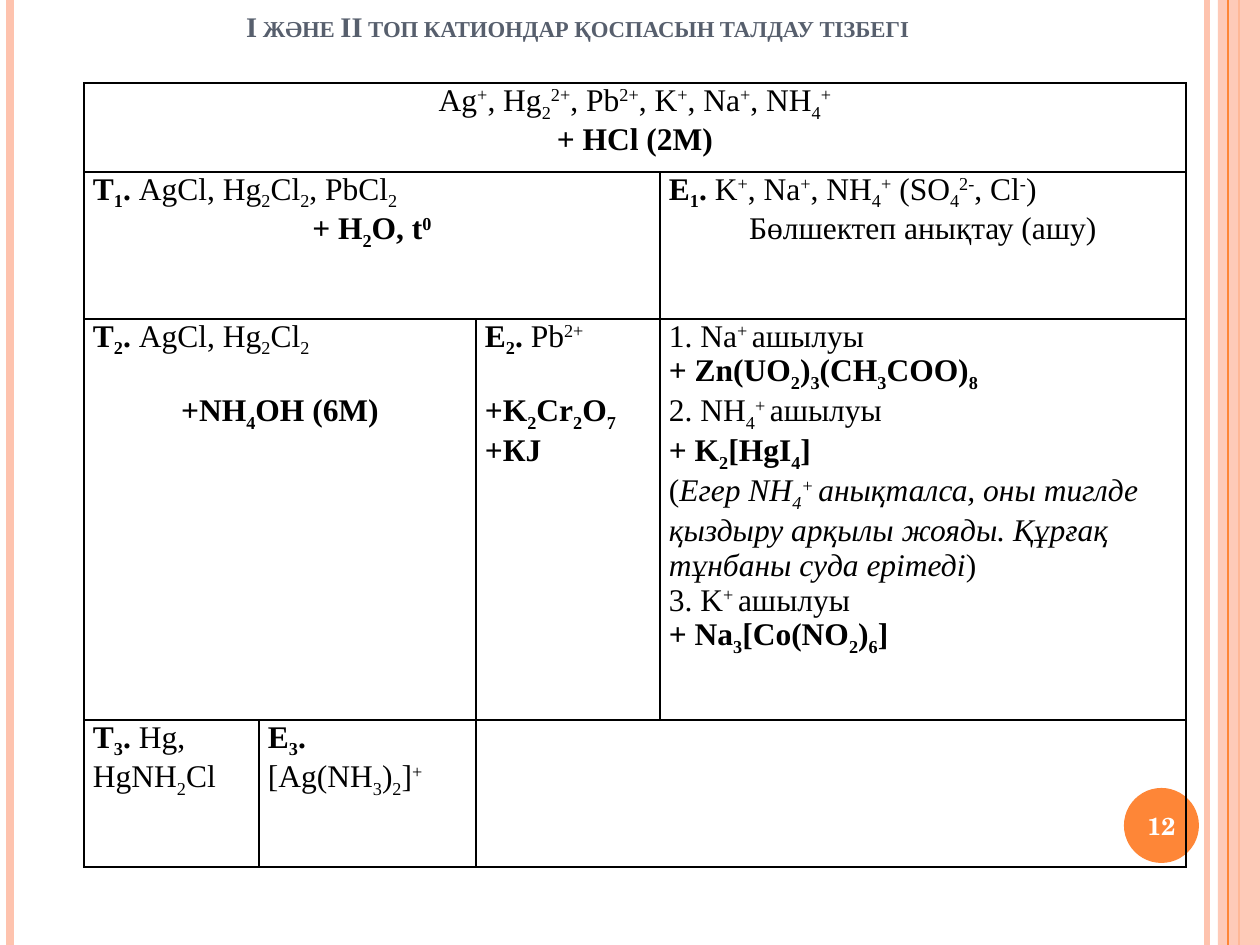
from lxml.etree import SubElement
from pptx import Presentation
from pptx.dml.color import RGBColor
from pptx.enum.shapes import MSO_CONNECTOR, MSO_SHAPE
from pptx.enum.text import MSO_ANCHOR, PP_ALIGN
from pptx.oxml.ns import qn
from pptx.util import Pt

PX = 914400 // 126
SERIF = "Times New Roman"
PEACH, ORANGE = "FEC3AE", "FE8637"
MARKS = "_^*~"


def rgb(value):
    return RGBColor.from_string(value)


def write_formula(paragraph, markup):
    active = dict.fromkeys(MARKS, False)
    for mark in MARKS:
        markup = markup.replace(mark, f"|{mark}|")
    for piece in markup.split("|"):
        if piece in active:
            active[piece] = not active[piece]
        elif piece:
            run = paragraph.add_run()
            run.text = piece
            run.font.name = SERIF
            run.font.size = Pt(18)
            run.font.color.rgb = rgb("000000")
            run.font.bold = active["*"]
            run.font.italic = active["~"]
            if active["_"] or active["^"]:
                run._r.get_or_add_rPr().set("baseline", "-25000" if active["_"] else "30000")


prs = Presentation()
prs.slide_width, prs.slide_height = 1260 * PX, 945 * PX
slide = prs.slides.add_slide(prs.slide_layouts[5])
shapes = slide.shapes

title = shapes.title
title.left, title.top, title.width, title.height = 63 * PX, 6 * PX, 1029 * PX, 40 * PX
heading = title.text_frame
heading.text = "I және II топ катиондар қоспасын талдау тізбегі"
heading.vertical_anchor = MSO_ANCHOR.MIDDLE
heading.margin_top = heading.margin_bottom = 0
heading.paragraphs[0].alignment = PP_ALIGN.CENTER
heading_run = heading.paragraphs[0].runs[0]
heading_run.font.name = SERIF
heading_run.font.size = Pt(16.2)
heading_run.font.bold = True
heading_run.font.color.rgb = rgb("575F6D")
heading_run._r.get_or_add_rPr().set("cap", "small")

band = shapes.add_shape(MSO_SHAPE.RECTANGLE, 1218 * PX, 0, 42 * PX, 945 * PX)
badge = shapes.add_shape(MSO_SHAPE.OVAL, 1124 * PX, 788 * PX, 75 * PX, 75 * PX)
for ornament, color in ((band, PEACH), (badge, ORANGE)):
    ornament.shadow.inherit = False
    ornament.fill.solid()
    ornament.fill.fore_color.rgb = rgb(color)
    ornament.line.fill.background()
band_color = band._element.spPr.find(qn("a:solidFill")).find(qn("a:srgbClr"))
SubElement(band_color, qn("a:alpha"), val="87000")

for x, color, weight in ((1207, PEACH, 3), (10, PEACH, 4.5), (1239, "FEB796", 1.5), (1228, ORANGE, 0.75)):
    stripe = shapes.add_connector(MSO_CONNECTOR.STRAIGHT, x * PX, 0, x * PX, 945 * PX)
    stripe.line.color.rgb = rgb(color)
    stripe.line.width = Pt(weight)
    SubElement(stripe._element.spPr, qn("a:effectLst"))

number = badge.text_frame
number.text = "12"
number.margin_left = number.margin_right = number.margin_top = number.margin_bottom = 0
number.vertical_anchor = MSO_ANCHOR.MIDDLE
number.paragraphs[0].alignment = PP_ALIGN.CENTER
number_font = number.paragraphs[0].runs[0].font
number_font.name = "TeX Gyre Schola"
number_font.size = Pt(14)
number_font.bold = True
number_font.color.rgb = rgb("FFFFFF")

columns, rows = (175, 217, 184, 526), (89, 147, 401, 147)
scheme = shapes.add_table(4, 4, 84 * PX, 83 * PX, sum(columns) * PX, sum(rows) * PX).table
scheme.first_row = scheme.horz_banding = False
for column, width in zip(scheme.columns, columns):
    column.width = width * PX
for row, height in zip(scheme.rows, rows):
    row.height = height * PX

for cell in scheme.iter_cells():
    cell.margin_left = cell.margin_right = 9 * PX
    cell.margin_top = cell.margin_bottom = 0
    for side in ("a:lnL", "a:lnR", "a:lnT", "a:lnB"):
        border = SubElement(cell._tc.get_or_add_tcPr(), qn(side), w=str(Pt(1)))
        SubElement(SubElement(border, qn("a:solidFill")), qn("a:srgbClr"), val="000000")
    cell.fill.background()

for row, first, last in ((0, 0, 3), (1, 0, 2), (2, 0, 1), (3, 2, 3)):
    scheme.cell(row, first).merge(scheme.cell(row, last))

LEFT, CENTER = PP_ALIGN.LEFT, PP_ALIGN.CENTER
steps = {
    (0, 0): [
        (CENTER, 0, "Ag^+^, Hg_2_^2+^, Pb^2+^, K^+^, Na^+^, NH_4_^+^"),
        (CENTER, 0, "*+ HCl (2М)*"),
    ],
    (1, 0): [
        (LEFT, 0, "*Т_1_. *AgCl, Hg_2_Cl_2_, PbCl_2_"),
        (CENTER, 0, "*+ H_2_O, t^0^*"),
    ],
    (1, 3): [
        (LEFT, 0, "*Е_1_. *K^+^, Na^+^, NH_4_^+^ (SO_4_^2-^, Cl^-^)"),
        (CENTER, 0, "Бөлшектеп анықтау (ашу)"),
    ],
    (2, 0): [
        (LEFT, 0, "*Т_2_. *AgCl, Hg_2_Cl_2_"),
        (CENTER, 20, "*+NH_4_OH (6М)*"),
    ],
    (2, 2): [
        (LEFT, 0, "*Е_2_. *Pb^2+^"),
        (LEFT, 20, "*+K_2_Cr_2_O_7_*"),
        (LEFT, 0, "*+КJ*"),
    ],
    (2, 3): [
        (LEFT, 0, "1. Na^+ ^ашылуы"),
        (LEFT, 0, "*+ Zn(UO_2_)_3_(CH_3_COO)_8_*"),
        (LEFT, 0, "2. NH_4_^+ ^ашылуы"),
        (LEFT, 0, "*+ K_2_[HgI_4_]*"),
        (LEFT, 0, "(~Егер NH_4_^+ ^анықталса, оны тиглде қыздыру арқылы жояды. "
                  "Құрғақ тұнбаны суда ерітеді~)"),
        (LEFT, 0, "3. K^+ ^ашылуы"),
        (LEFT, 0, "*+ Na_3_[Co(NO_2_)_6_]*"),
    ],
    (3, 0): [(LEFT, 0, "*Т_3_. *Hg,"), (LEFT, 0, "HgNH_2_Cl")],
    (3, 1): [(LEFT, 0, "*Е_3_.*"), (LEFT, 0, "[Ag(NH_3_)_2_]^+^")],
}
for (row, column), lines in steps.items():
    frame = scheme.cell(row, column).text_frame
    for index, (alignment, gap, markup) in enumerate(lines):
        paragraph = frame.add_paragraph() if index else frame.paragraphs[0]
        paragraph.alignment = alignment
        if gap:
            paragraph.space_before = Pt(gap)
        write_formula(paragraph, markup)

prs.save("out.pptx")
